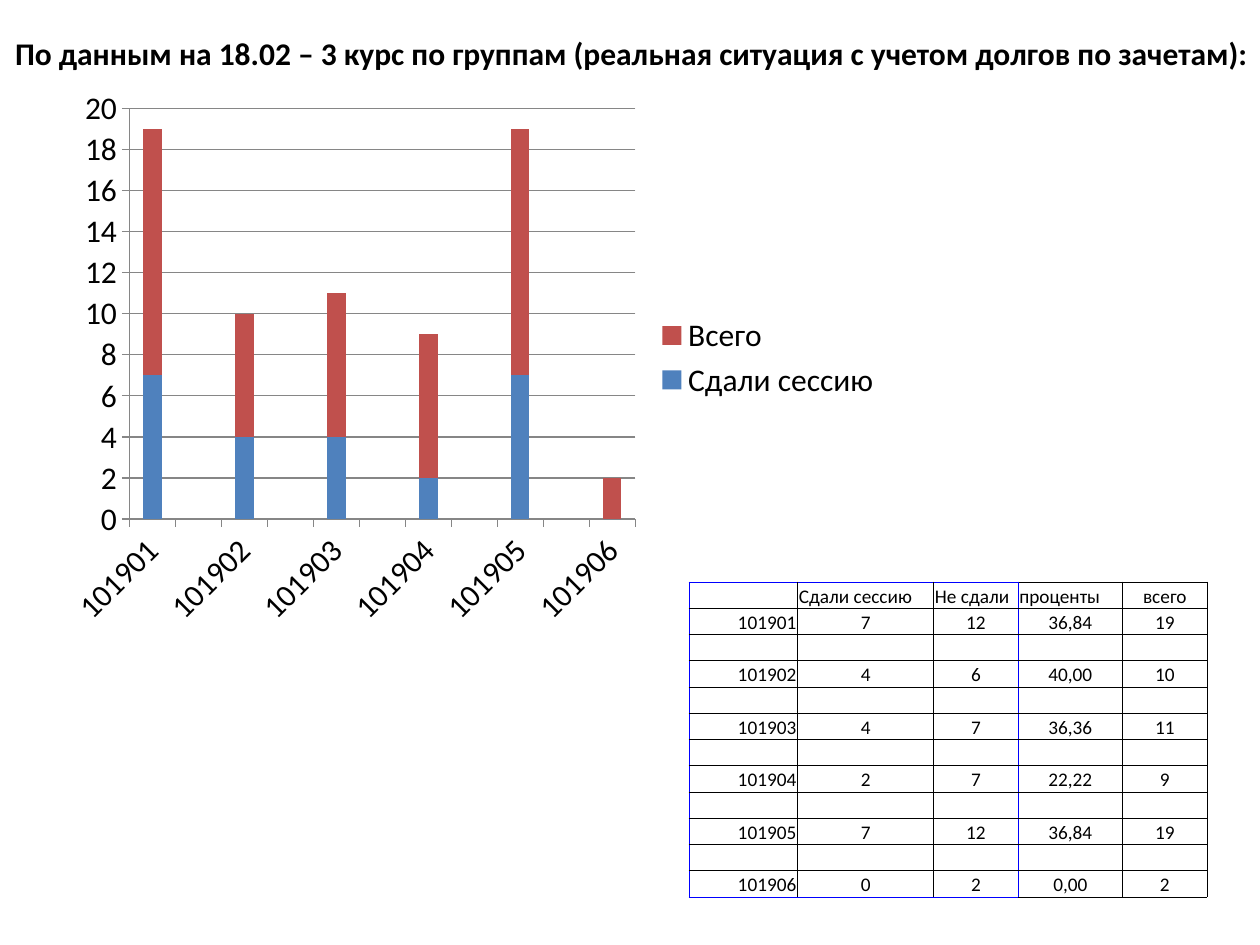
import pptx
import pptx.chart.data
import pptx.dml.color
import pptx.enum.chart
import pptx.enum.text
import pptx.oxml
import pptx.oxml.ns
import pptx.util
from lxml import etree

Pt = pptx.util.Pt
FONT = "Calibri"
BLACK, BLUE, GREY = "000000", "0000FF", "868686"
TITLE = "По данным на 18.02 – 3 курс по группам (реальная ситуация с учетом долгов по зачетам):"
HEADINGS = ["", "Сдали сессию", "Не сдали", "проценты", "всего"]
GROUPS = [
    ("101901", 7, 12),
    ("101902", 4, 6),
    ("101903", 4, 7),
    ("101904", 2, 7),
    ("101905", 7, 12),
    ("101906", 0, 2),
]
COLUMN_WIDTHS = [62, 77.8, 48.2, 59.8, 48.2]
ROW_HEIGHT = 15


def rgb(value):
    return pptx.dml.color.RGBColor.from_string(value)


def set_all(target, values):
    for name, value in values.items():
        setattr(target, name, value)


def format_font(font, size, bold=False):
    set_all(font, {"name": FONT, "size": Pt(size), "bold": bold})
    font.color.rgb = rgb(BLACK)


def spaced(rows, gap):
    """Put a gap row between neighbouring rows."""
    result = []
    for row in rows:
        result += [row, gap]
    return result[:-1]


def add_title(slide):
    title = slide.shapes.title
    set_all(title, {"left": Pt(1.4), "top": Pt(15.8), "width": Pt(720), "height": Pt(29)})
    frame = title.text_frame
    set_all(frame, {
        "text": TITLE,
        "word_wrap": False,
        "vertical_anchor": pptx.enum.text.MSO_ANCHOR.TOP,
        "auto_size": pptx.enum.text.MSO_AUTO_SIZE.SHAPE_TO_FIT_TEXT,
    })
    paragraph = frame.paragraphs[0]
    paragraph.alignment = pptx.enum.text.PP_ALIGN.LEFT
    format_font(paragraph.runs[0].font, 18, bold=True)


def format_line(line):
    line.color.rgb = rgb(GREY)
    line.width = Pt(0.75)


def add_results_chart(slide):
    names, passed, failed = zip(*spaced(GROUPS, ("", None, None)))
    data = pptx.chart.data.CategoryChartData()
    data.categories = names
    data.add_series("Сдали сессию", passed)
    data.add_series("Всего", failed)
    chart = slide.shapes.add_chart(
        pptx.enum.chart.XL_CHART_TYPE.COLUMN_STACKED,
        Pt(31), Pt(44.6), Pt(480), Pt(319.7), data).chart
    format_font(chart.font, 18)
    set_all(chart, {"has_title": False, "has_legend": True})
    set_all(chart.legend, {
        "position": pptx.enum.chart.XL_LEGEND_POSITION.RIGHT,
        "include_in_layout": False,
    })
    set_all(chart.plots[0], {"gap_width": 150, "overlap": 100, "vary_by_categories": False})
    for series, color in zip(chart.plots[0].series, ["4F81BD", "C0504D"]):
        series.format.fill.solid()
        series.format.fill.fore_color.rgb = rgb(color)
    for axis in (chart.category_axis, chart.value_axis):
        axis.major_tick_mark = pptx.enum.chart.XL_TICK_MARK.OUTSIDE
        format_line(axis.format.line)
        format_font(axis.tick_labels.font, 18)
    set_all(chart.value_axis, {"minimum_scale": 0, "maximum_scale": 20, "major_unit": 2})
    format_line(chart.value_axis.major_gridlines.format.line)
    for body in chart.element.xpath(".//c:catAx/c:txPr/a:bodyPr"):
        body.set("rot", "-2700000")


def border_colors(row, column, last_row):
    """Blue frames the first three columns; everything else is black."""
    framed = column < 3
    blue = {
        "L": column in (0, 3),
        "R": column == 2,
        "T": framed and row == 0,
        "B": framed and row == last_row,
    }
    return {side: BLUE if is_blue else BLACK for side, is_blue in blue.items()}


def add_borders(cell, colors):
    properties = cell._tc.get_or_add_tcPr()
    for side, color in colors.items():
        properties.append(pptx.oxml.parse_xml(
            f'<a:ln{side} {pptx.oxml.ns.nsdecls("a")} w="{Pt(0.5)}"><a:solidFill>'
            f'<a:srgbClr val="{color}"/></a:solidFill></a:ln{side}>'))


def fill_cell(cell, text, alignment):
    set_all(cell, {
        "margin_left": Pt(0.7), "margin_right": Pt(0.7),
        "margin_top": Pt(0.7), "margin_bottom": 0,
        "vertical_anchor": pptx.enum.text.MSO_ANCHOR.BOTTOM,
    })
    cell.fill.background()
    paragraph = cell.text_frame.paragraphs[0]
    paragraph.alignment = alignment
    if text:
        run = paragraph.add_run()
        run.text = text
        format_font(run.font, 11)
    else:
        # The end mark keeps an empty row at its low height.
        etree.SubElement(paragraph._p, pptx.oxml.ns.qn("a:endParaRPr"), sz="1100")


def table_row(name, passed, failed):
    total = passed + failed
    percent = f"{100 * passed / total:.2f}".replace(".", ",")
    return [name, str(passed), str(failed), percent, str(total)]


def add_results_table(slide):
    rows = [HEADINGS] + spaced([table_row(*group) for group in GROUPS], [""] * len(HEADINGS))
    table = slide.shapes.add_table(
        len(rows), len(HEADINGS), Pt(393.8), Pt(332.6),
        Pt(sum(COLUMN_WIDTHS)), Pt(ROW_HEIGHT * len(rows))).table
    set_all(table, {"first_row": False, "horz_banding": False})
    for column, width in zip(table.columns, COLUMN_WIDTHS):
        column.width = Pt(width)
    align = pptx.enum.text.PP_ALIGN
    heading_alignments = [align.LEFT] * 4 + [align.CENTER]
    body_alignments = [align.RIGHT] + [align.CENTER] * 4
    for r, texts in enumerate(rows):
        table.rows[r].height = Pt(ROW_HEIGHT)
        alignments = body_alignments if r else heading_alignments
        for c, (text, alignment) in enumerate(zip(texts, alignments)):
            cell = table.cell(r, c)
            add_borders(cell, border_colors(r, c, len(rows) - 1))
            fill_cell(cell, text, alignment)


def main():
    deck = pptx.Presentation()
    set_all(deck, {"slide_width": Pt(720), "slide_height": Pt(540)})
    slide = deck.slides.add_slide(deck.slide_layouts.get_by_name("Title Only"))
    add_results_chart(slide)
    add_title(slide)
    add_results_table(slide)
    deck.save("out.pptx")


if __name__ == "__main__":
    main()
